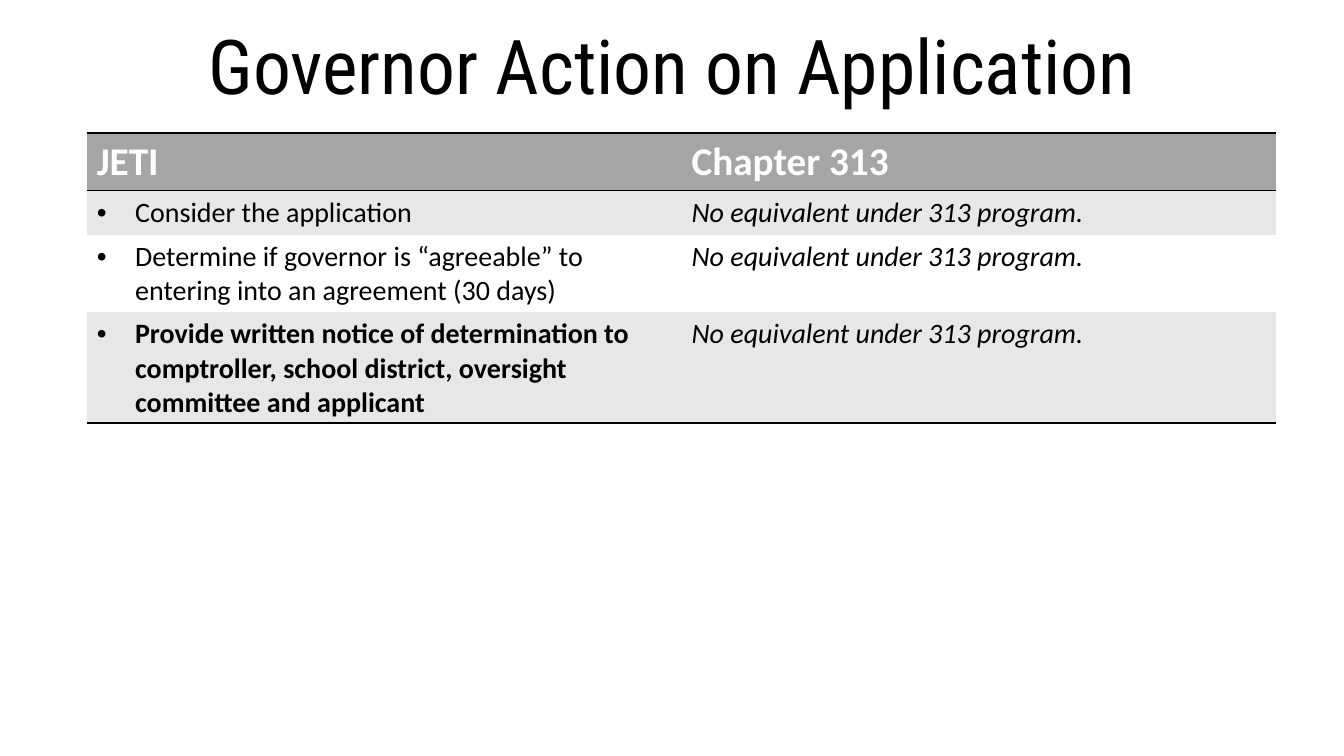
from pptx import Presentation
from pptx.dml.color import RGBColor
from pptx.enum.text import MSO_ANCHOR, PP_ALIGN
from pptx.oxml import parse_xml
from pptx.oxml.ns import nsdecls, qn
from pptx.util import Inches, Pt

BLACK = RGBColor(0x00, 0x00, 0x00)
WHITE = RGBColor(0xFF, 0xFF, 0xFF)
HEADER_GREY = RGBColor(0xA5, 0xA5, 0xA5)
BAND_GREY = RGBColor(0xE7, 0xE7, 0xE7)
NO_GRID_STYLE = "{2D5ABB26-0587-4C30-8999-92F81FD0307C}"

HEADINGS = ("JETI", "Chapter 313")
NO_EQUIVALENT = "No equivalent under 313 program."
GOVERNOR_STEPS = (
    "Consider the application",
    "Determine if governor is “agreeable” to entering into an agreement (30 days)",
    "Provide written notice of determination to comptroller, school district, "
    "oversight committee and applicant",
)
ROW_HEIGHTS = (0.57, 0.44, 0.76, 1.1)


def write(paragraph, text, color, **formats):
    run = paragraph.add_run()
    run.text = text
    run.font.color.rgb = color
    for attribute, value in formats.items():
        setattr(run.font, attribute, value)


def add_rule(cell, side):
    """Draw a black rule on one side of a cell, given as T or B."""
    cell._tc.get_or_add_tcPr().insert(0, parse_xml(
        f'<a:ln{side} {nsdecls("a")} w="{Pt(1.5)}"><a:solidFill>'
        f'<a:srgbClr val="{BLACK}"/></a:solidFill></a:ln{side}>'))


prs = Presentation()
prs.slide_width, prs.slide_height = Inches(13.33), Inches(7.5)
slide = prs.slides.add_slide(prs.slide_layouts[6])

# Title
title = slide.shapes.add_textbox(
    Inches(1.78), Inches(0.14), Inches(9.78), Inches(1.01)).text_frame
title.word_wrap = False
title.vertical_anchor = MSO_ANCHOR.TOP
title.paragraphs[0].alignment = PP_ALIGN.CENTER
write(title.paragraphs[0], "Governor Action on Application", BLACK,
      size=Pt(54), name="Roboto Condensed")

# Comparison table
comparison = slide.shapes.add_table(
    len(ROW_HEIGHTS), len(HEADINGS),
    Inches(0.86), Inches(1.32), Inches(11.8), Inches(sum(ROW_HEIGHTS))).table
comparison.horz_banding = False
comparison._tbl.tblPr.find(qn("a:tableStyleId")).text = NO_GRID_STYLE
for row, height in zip(comparison.rows, ROW_HEIGHTS):
    row.height = Inches(height)

# Header row
for column, heading in enumerate(HEADINGS):
    cell = comparison.cell(0, column)
    cell.fill.solid()
    cell.fill.fore_color.rgb = HEADER_GREY
    write(cell.text_frame.paragraphs[0], heading, WHITE,
          size=Pt(28), name="Calibri", bold=True)
    add_rule(cell, "B")
    add_rule(cell, "T")

# Step rows, with the final step in bold
last_row = len(GOVERNOR_STEPS)
for row, step in enumerate(GOVERNOR_STEPS, start=1):
    for column, text in enumerate((step, NO_EQUIVALENT)):
        cell = comparison.cell(row, column)
        cell.fill.solid()
        cell.fill.fore_color.rgb = BAND_GREY if row % 2 else WHITE
        paragraph = cell.text_frame.paragraphs[0]
        is_step = column == 0
        write(paragraph, text, BLACK, size=Pt(20), name="Calibri",
              bold=is_step and row == last_row, italic=not is_step)
        if is_step:
            bullet = paragraph._p.get_or_add_pPr()
            bullet.set("marL", str(Inches(0.38)))
            bullet.set("indent", str(-Inches(0.38)))
            bullet.append(parse_xml(f'<a:buFont {nsdecls("a")} typeface="Arial"/>'))
            bullet.append(parse_xml(f'<a:buChar {nsdecls("a")} char="•"/>'))
        if row == last_row:
            add_rule(cell, "B")

prs.save("out.pptx")
